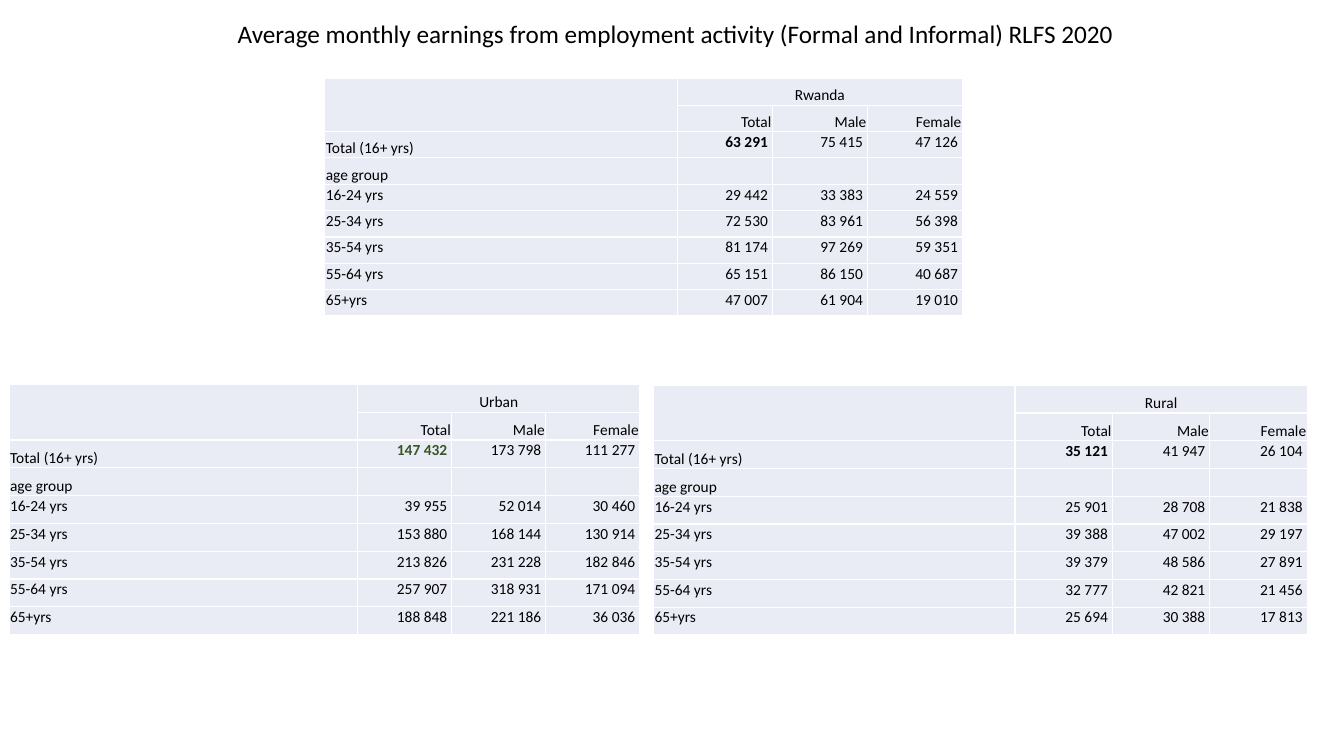
from dataclasses import dataclass

from lxml import etree
from pptx import Presentation
from pptx import util as u
from pptx.dml import color
from pptx.enum import text
from pptx.oxml import ns


@dataclass(frozen=True)
class Theme:
    font: str = "Calibri"
    title_size: float = 18
    table_size: float = 11
    ink: str = "000000"
    highlight: str = "385723"
    paper: str = "FFFFFF"
    cell: str = "E9EBF5"


THEME = Theme()
LEFT, CENTER, RIGHT = text.PP_ALIGN.LEFT, text.PP_ALIGN.CENTER, text.PP_ALIGN.RIGHT
TOP, MIDDLE, BOTTOM = text.MSO_ANCHOR.TOP, text.MSO_ANCHOR.MIDDLE, text.MSO_ANCHOR.BOTTOM
LABEL_SHARE = 0.553
EDGE_MARGIN, NUMBER_MARGIN = 0.72, 3.2
SEXES = ["Total", "Male", "Female"]
ROW_LABELS = ["Total (16+ yrs)", "age group", "16-24 yrs", "25-34 yrs",
              "35-54 yrs", "55-64 yrs", "65+yrs"]
NO_VALUES = ["", "", ""]

RWANDA = [
    ["63 291", "75 415", "47 126"],
    NO_VALUES,
    ["29 442", "33 383", "24 559"],
    ["72 530", "83 961", "56 398"],
    ["81 174", "97 269", "59 351"],
    ["65 151", "86 150", "40 687"],
    ["47 007", "61 904", "19 010"],
]
URBAN = [
    ["147 432", "173 798", "111 277"],
    NO_VALUES,
    ["39 955", "52 014", "30 460"],
    ["153 880", "168 144", "130 914"],
    ["213 826", "231 228", "182 846"],
    ["257 907", "318 931", "171 094"],
    ["188 848", "221 186", "36 036"],
]
RURAL = [
    ["35 121", "41 947", "26 104"],
    NO_VALUES,
    ["25 901", "28 708", "21 838"],
    ["39 388", "47 002", "29 197"],
    ["39 379", "48 586", "27 891"],
    ["32 777", "42 821", "21 456"],
    ["25 694", "30 388", "17 813"],
]


def rgb(value):
    return color.RGBColor.from_string(value)


def style_paragraph(paragraph, size, alignment, ink=THEME.ink, bold=False):
    paragraph.alignment = alignment
    paragraph.font.name = THEME.font
    paragraph.font.size = u.Pt(size)
    paragraph.font.bold = bold
    paragraph.font.color.rgb = rgb(ink)


def add_borders(cell):
    properties = cell._tc.get_or_add_tcPr()
    for side in ("a:lnL", "a:lnR", "a:lnT", "a:lnB"):
        line = etree.SubElement(properties, ns.qn(side), w=str(u.Pt(1)))
        fill = etree.SubElement(line, ns.qn("a:solidFill"))
        etree.SubElement(fill, ns.qn("a:srgbClr"), val=THEME.paper)


def fill_cell(cell, words="", alignment=LEFT, anchor=TOP, right=EDGE_MARGIN,
              ink=THEME.ink, bold=False):
    cell.text = words
    cell.vertical_anchor = anchor
    cell.margin_left = cell.margin_top = u.Pt(EDGE_MARGIN)
    cell.margin_right = u.Pt(right)
    cell.margin_bottom = 0
    style_paragraph(cell.text_frame.paragraphs[0], THEME.table_size, alignment, ink, bold)
    add_borders(cell)
    cell.fill.solid()
    cell.fill.fore_color.rgb = rgb(THEME.cell)


def add_title(slide, words, left, top, width, height):
    title = slide.shapes.title
    title.left, title.top = u.Pt(left), u.Pt(top)
    title.width, title.height = u.Pt(width), u.Pt(height)
    title.fill.solid()
    title.fill.fore_color.rgb = rgb(THEME.paper)
    frame = title.text_frame
    frame.text = words
    frame.word_wrap = True
    frame.auto_size = text.MSO_AUTO_SIZE.NONE
    frame.vertical_anchor = MIDDLE
    style_paragraph(frame.paragraphs[0], THEME.title_size, CENTER)


def add_earnings_table(slide, area, values, left, top, width, height, total_ink=THEME.ink):
    row_count, column_count = len(values) + 2, len(SEXES) + 1
    table = slide.shapes.add_table(row_count, column_count, u.Pt(left), u.Pt(top),
                                   u.Pt(width), u.Pt(height)).table
    table.first_row = table.horz_banding = False
    label_width = width * LABEL_SHARE
    for index, column in enumerate(table.columns):
        column.width = u.Pt((width - label_width) / len(SEXES) if index else label_width)
    for row in table.rows:
        row.height = u.Pt(height / row_count)

    for row in range(2):
        for column in range(column_count):
            header = SEXES[column - 1] if row and column else ""
            fill_cell(table.cell(row, column), header, RIGHT, BOTTOM)
    table.cell(0, 0).merge(table.cell(1, 0))
    table.cell(0, 1).merge(table.cell(0, column_count - 1))
    area_cell = table.cell(0, 1)
    area_cell.text = area
    style_paragraph(area_cell.text_frame.paragraphs[0], THEME.table_size, CENTER)

    for row, (label, numbers) in enumerate(zip(ROW_LABELS, values), start=2):
        fill_cell(table.cell(row, 0), label, anchor=BOTTOM if row < 4 else TOP)
        for column, number in enumerate(numbers, start=1):
            overall = row == 2 and column == 1
            fill_cell(table.cell(row, column), number, RIGHT, right=NUMBER_MARGIN,
                      ink=total_ink if overall else THEME.ink, bold=overall)


def main():
    presentation = Presentation()
    presentation.slide_width, presentation.slide_height = u.Pt(960), u.Pt(540)
    slide = presentation.slides.add_slide(presentation.slide_layouts[5])
    add_earnings_table(slide, "Rwanda", RWANDA, 232, 56.3, 455.5, 169.5)
    add_earnings_table(slide, "Urban", URBAN, 6.5, 274.5, 450.5, 179)
    add_earnings_table(slide, "Rural", RURAL, 466.8, 275.2, 467, 178.5, THEME.ink)
    add_title(slide, "Average monthly earnings from employment activity "
                     "(Formal and Informal) RLFS 2020", 42.5, 6.5, 880, 35.3)
    urban = slide.shapes[2].table.cell(2, 1).text_frame.paragraphs[0]
    urban.font.color.rgb = rgb(THEME.highlight)
    presentation.save("out.pptx")


if __name__ == "__main__":
    main()
